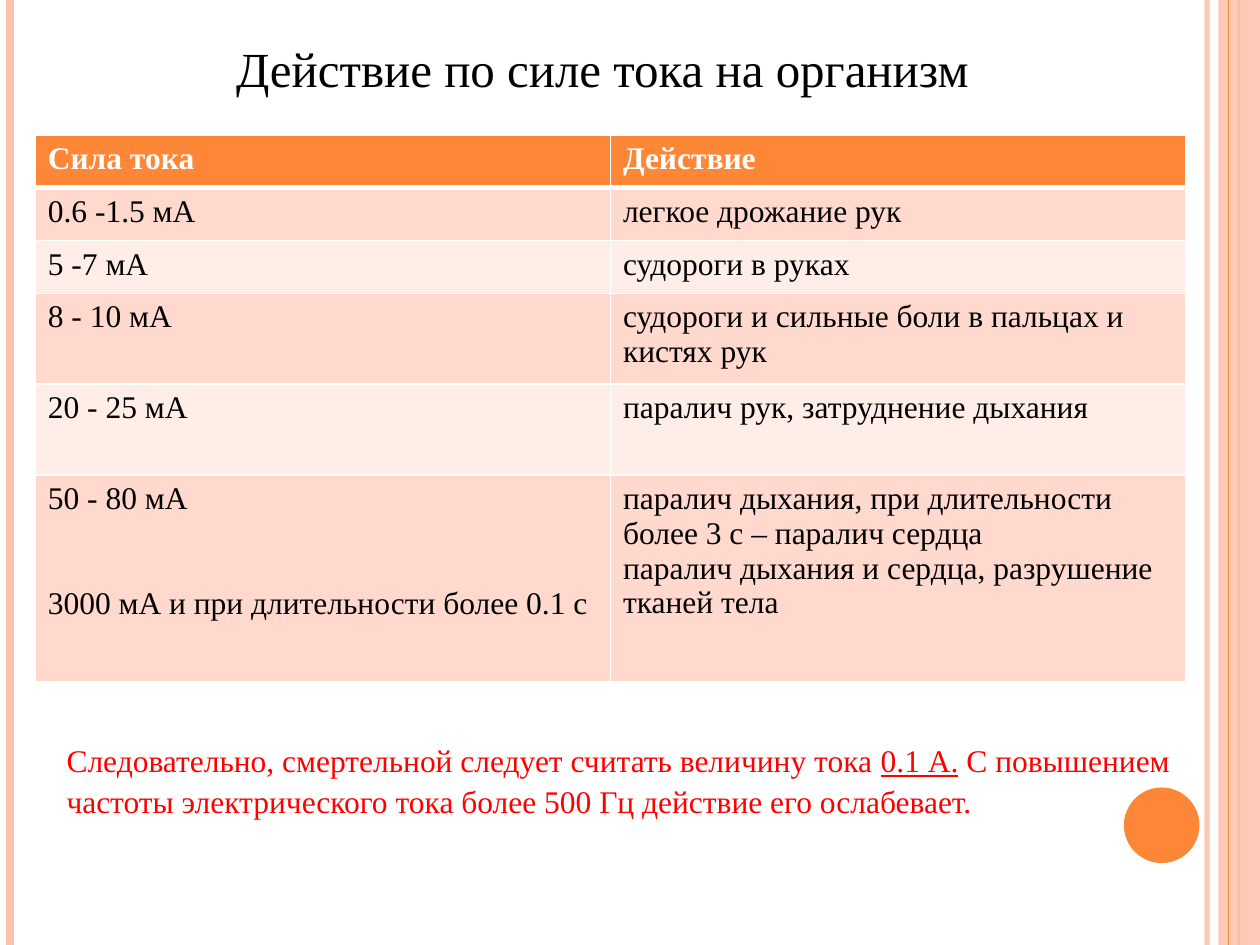
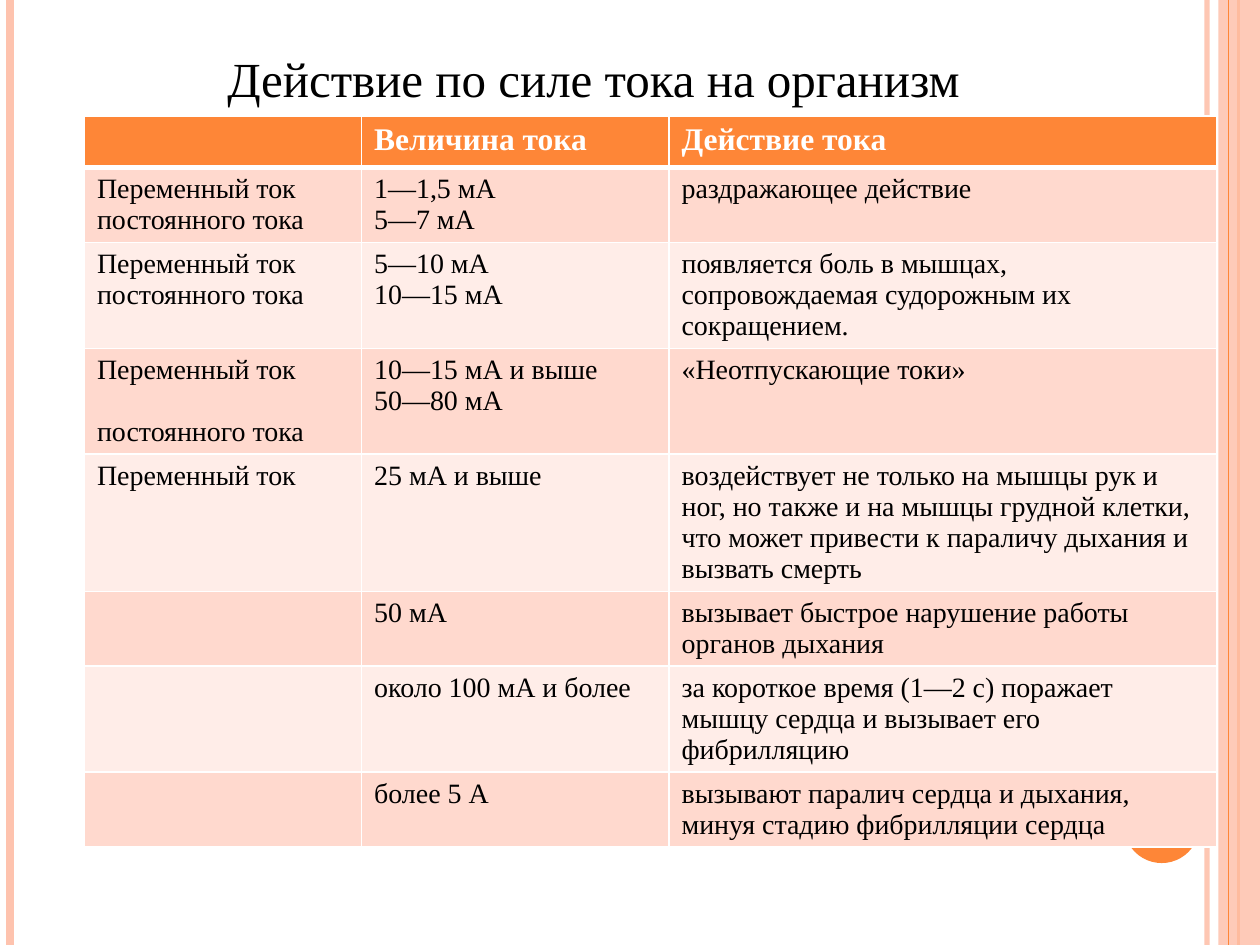
from lxml import etree
from pptx import Presentation
from pptx.dml.color import RGBColor
from pptx.enum.shapes import MSO_CONNECTOR, MSO_SHAPE
from pptx.enum.text import PP_ALIGN
from pptx.oxml.ns import qn
from pptx.util import Inches, Pt

STRAIGHT = MSO_CONNECTOR.STRAIGHT
RECTANGLE = MSO_SHAPE.RECTANGLE
OVAL = MSO_SHAPE.OVAL
CENTER = PP_ALIGN.CENTER

FONT = "Times New Roman"
TITLE = "Действие по силе тока на организм"
COLORS = {
    "band": "FEC3AE",
    "accent": "FE8637",
    "odd_row": "FFD9CE",
    "even_row": "FFEDE8",
    "white": "FFFFFF",
    "black": "000000",
    "warning": "FF0000",
}

# Vertical lines of the frame: x, colour, width in points, opacity in percent
RIGHT_LINE = (9.58, "band", 3, 93)
LEFT_LINE = (0.08, "band", 4.5, 100)
THICK_ACCENT = (9.83, "accent", 1.5, 100)
THIN_ACCENT = (9.75, "accent", 0.75, 100)

# One paragraph per list item; gaps are points before the last paragraph of a cell
CURRENT_TABLES = [
    {
        "title_box": (1.77, 0.21, 6.02, 0.57),
        "origin": (0.28, 1.07),
        "columns": [4.565, 4.565],
        "rows": [0.42, 0.42, 0.42, 0.72, 0.72, 1.64],
        "body_size": 18,
        "gaps": {(5, 0): 40},
        "cells": [
            [["Сила тока"], ["Действие"]],
            [["0.6 -1.5 мА"], ["легкое дрожание рук"]],
            [["5 -7 мА"], ["судороги в руках"]],
            [["8 - 10 мА"], ["судороги и сильные боли в пальцах и кистях рук"]],
            [["20 - 25 мА"], ["паралич рук, затруднение дыхания"]],
            [["50 - 80 мА", "3000 мА и при длительности более 0.1 с"],
             ["паралич дыхания, при длительности более 3 с – паралич сердца",
              "паралич дыхания и сердца, разрушение тканей тела"]],
        ],
        "conclusion": [
            ("Следовательно, смертельной следует считать величину тока ", False),
            ("0.1 А.", True),
            (" С повышением частоты электрического тока более 500 Гц "
             "действие его ослабевает.", False),
        ],
    },
    {
        "title_box": (1.67, 0.29, 6.08, 0.57),
        "origin": (0.67, 0.92),
        "columns": [2.2, 2.44, 4.35],
        "rows": [0.41] * 8,
        "body_size": 16,
        "gaps": {(3, 0): 17.7},
        "cells": [
            [[], ["Величина тока"], ["Действие тока"]],
            [["Переменный ток", "постоянного тока"], ["1—1,5 мА", "5—7 мА"],
             ["раздражающее действие"]],
            [["Переменный ток", "постоянного тока"], ["5—10 мА", "10—15 мА"],
             ["появляется боль в мышцах, сопровождаемая судорожным их сокращением."]],
            [["Переменный ток", "постоянного тока"], ["10—15 мА и выше", "50—80 мА"],
             ["«Неотпускающие токи»"]],
            [["Переменный ток"], ["25 мА и выше"],
             ["воздействует не только на мышцы рук и ног, но также и на мышцы грудной "
              "клетки, что может привести к параличу дыхания и вызвать смерть"]],
            [[], ["50 мА"], ["вызывает быстрое нарушение работы органов дыхания"]],
            [[], ["около 100 мА и более"],
             ["за короткое время (1—2 с) поражает мышцу сердца и вызывает его фибрилляцию"]],
            [[], ["более 5 А"],
             ["вызывают паралич сердца и дыхания, минуя стадию фибрилляции сердца"]],
        ],
        "conclusion": [],
    },
]


def paint(fill, color, opacity=100):
    fill.solid()
    fill.fore_color.rgb = RGBColor.from_string(COLORS[color])
    if opacity < 100:
        rgb = fill._xPr.find(".//" + qn("a:srgbClr"))
        etree.SubElement(rgb, qn("a:alpha"), val=str(opacity * 1000))


def style_paragraph(paragraph, size, color, bold=False):
    paragraph.font.name = FONT
    paragraph.font.size = Pt(size)
    paragraph.font.bold = bold
    paragraph.font.color.rgb = RGBColor.from_string(COLORS[color])


presentation = Presentation()
presentation.slide_width = Inches(10)
presentation.slide_height = Inches(7.5)

for content in CURRENT_TABLES:
    slide = presentation.slides.add_slide(presentation.slide_layouts[6])

    # Frame: lines and band at the edges, circle at the bottom right
    for part in (RIGHT_LINE, LEFT_LINE, THICK_ACCENT, "band", THIN_ACCENT, "circle"):
        if part in ("band", "circle"):
            kind, box, color, opacity = (
                (RECTANGLE, (9.67, 0, 0.33, 7.5), "band", 87) if part == "band"
                else (OVAL, (8.92, 6.25, 0.6, 0.6), "accent", 100))
            shape = slide.shapes.add_shape(kind, *map(Inches, box))
            shape.shadow.inherit = False
            paint(shape.fill, color, opacity)
            shape.line.fill.background()
        else:
            x, color, width, opacity = part
            line = slide.shapes.add_connector(
                STRAIGHT, Inches(x), Inches(0), Inches(x), Inches(7.5))
            line.line.width = Pt(width)
            paint(line.line.fill, color, opacity)
            etree.SubElement(line._element.spPr, qn("a:effectLst"))

    # Table
    columns, rows = content["columns"], content["rows"]
    left, top = content["origin"]
    table = slide.shapes.add_table(
        len(rows), len(columns), Inches(left), Inches(top),
        Inches(sum(columns)), Inches(sum(rows))).table
    for column, width in zip(table.columns, columns):
        column.width = Inches(width)
    for row, height in zip(table.rows, rows):
        row.height = Inches(height)

    for row_index, row_cells in enumerate(content["cells"]):
        header = row_index == 0
        for column_index, lines in enumerate(row_cells):
            cell = table.cell(row_index, column_index)
            paint(cell.fill, "accent" if header else
                  "odd_row" if row_index % 2 else "even_row")

            # White borders, thicker between header and body
            properties = cell._tc.get_or_add_tcPr()
            for position, side in enumerate("LRTB"):
                thick = (row_index, side) in ((0, "B"), (1, "T"))
                border = etree.Element(qn("a:ln" + side), w=str(Pt(3 if thick else 1)))
                fill = etree.SubElement(border, qn("a:solidFill"))
                etree.SubElement(fill, qn("a:srgbClr"), val=COLORS["white"])
                properties.insert(position, border)

            cell.text = "\n".join(lines)
            for paragraph in cell.text_frame.paragraphs:
                style_paragraph(paragraph, 18 if header else content["body_size"],
                                "white" if header else "black", header)
            gap = content["gaps"].get((row_index, column_index))
            if gap:
                paragraph.space_before = Pt(gap)

    # Conclusion
    if content["conclusion"]:
        text_box = slide.shapes.add_textbox(
            Inches(0.43), Inches(5.8), Inches(9.06), Inches(0.71))
        text_box.text_frame.word_wrap = True
        paragraph = text_box.text_frame.paragraphs[0]
        paragraph.line_spacing = 1.1
        style_paragraph(paragraph, 18, "warning")
        for text, underlined in content["conclusion"]:
            run = paragraph.add_run()
            run.text = text
            if underlined:
                run.font.underline = True

    # Title
    title = slide.shapes.add_textbox(*map(Inches, content["title_box"]))
    title.text_frame.word_wrap = False
    paragraph = title.text_frame.paragraphs[0]
    paragraph.text = TITLE
    paragraph.alignment = CENTER
    paragraph.line_spacing = 1.1
    style_paragraph(paragraph, 28, "black")

presentation.save("out.pptx")
